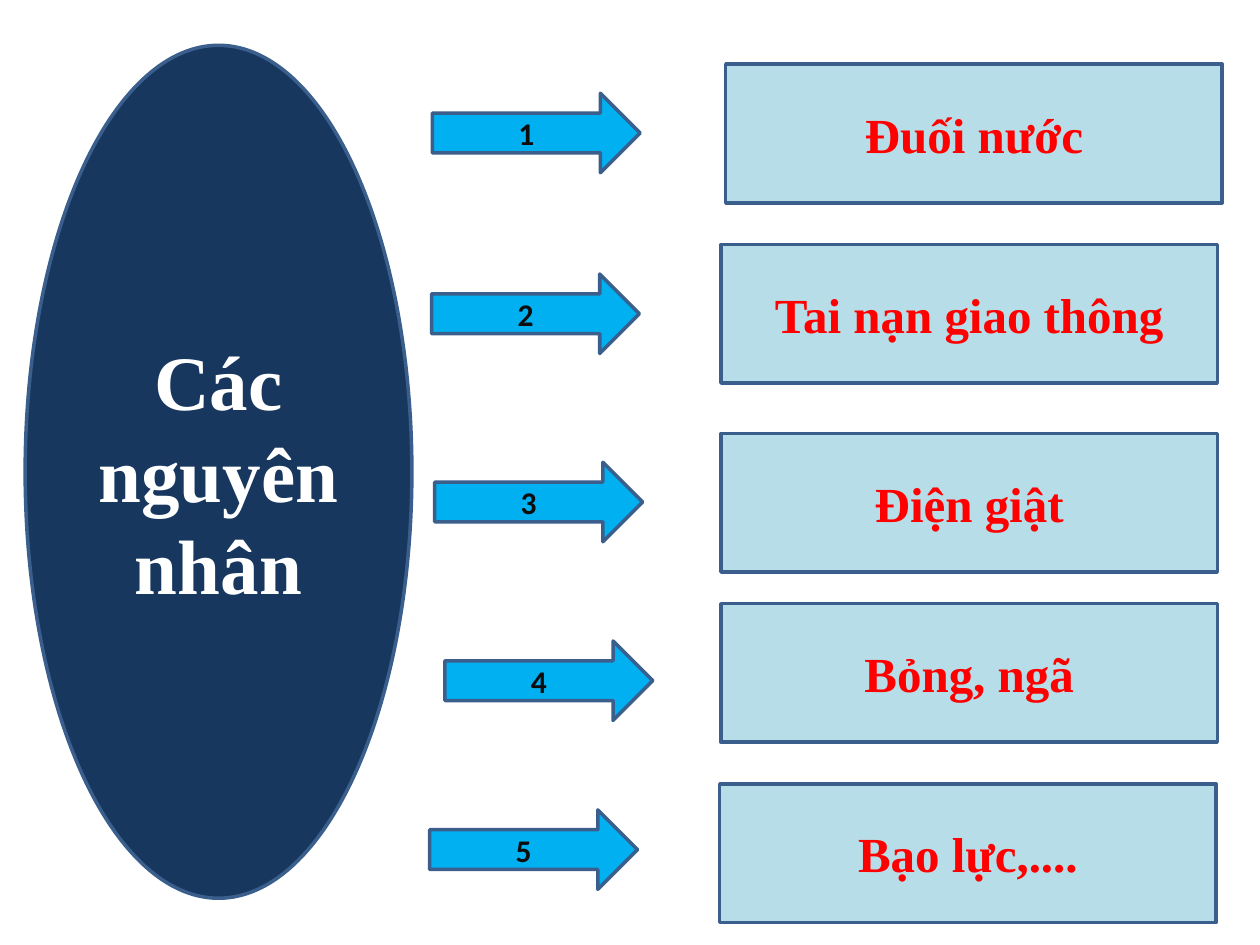
from dataclasses import dataclass

from pptx import Presentation
from pptx.dml.color import RGBColor
from pptx.enum.shapes import MSO_SHAPE
from pptx.enum.text import MSO_ANCHOR, PP_ALIGN
from pptx.util import Pt

OVAL = MSO_SHAPE.OVAL
ARROW = MSO_SHAPE.RIGHT_ARROW
RECT = MSO_SHAPE.RECTANGLE
MIDDLE = MSO_ANCHOR.MIDDLE
CENTER = PP_ALIGN.CENTER


@dataclass(frozen=True)
class Style:
    """Fill and type of one kind of part."""
    fill: str
    ink: str
    font: str
    size: float


@dataclass(frozen=True)
class Theme:
    """Colours and type sizes of the slide."""
    edge: str = "3A5F8C"
    weight: float = 2
    topic: Style = Style("17375E", "FFFFFF", "Times New Roman", 44)
    arrow: Style = Style("00B0F0", "0D0D0D", "Calibri", 18)
    cause: Style = Style("B7DEE8", "FF0000", "Times New Roman", 28)


THEME = Theme()
TOPIC_BOX = (14.4, 25.9, 221, 487.4)
ARROW_SIZE = (118.8, 45.4)
CAUSE_SIZE = (283.7, 79.2)
ROWS = [
    ("Đuối nước", (247, 53.3), (414.7, 36.7)),
    ("Tai nạn giao thông", (246.6, 156.6), (412, 139.7)),
    ("Điện giật", (248.4, 264.2), (412, 247.7)),
    ("Bỏng, ngã", (254.2, 366.3), (412, 345)),
    ("Bạo lực,....", (245.5, 462.8), (411.3, 448)),
]


def add_part(slide, kind, box, text, style):
    """Draw one filled shape with bold centred text."""
    part = slide.shapes.add_shape(kind, *map(Pt, box))
    part.shadow.inherit = False
    part.fill.solid()
    part.fill.fore_color.rgb = RGBColor.from_string(style.fill)
    part.line.color.rgb = RGBColor.from_string(THEME.edge)
    part.line.width = Pt(THEME.weight)
    frame = part.text_frame
    frame.word_wrap = True
    frame.vertical_anchor = MIDDLE
    para = frame.paragraphs[0]
    para.alignment = CENTER
    run = para.add_run()
    run.text = text
    run.font.name = style.font
    run.font.size = Pt(style.size)
    run.font.bold = True
    run.font.color.rgb = RGBColor.from_string(style.ink)


def add_topic(slide, box):
    """Draw the oval that names the topic."""
    add_part(slide, OVAL, box, "Các nguyên nhân", THEME.topic)


def add_arrow(slide, box, number):
    """Draw one numbered arrow."""
    add_part(slide, ARROW, box, str(number), THEME.arrow)


def add_cause(slide, box, text):
    """Draw the box of one cause."""
    add_part(slide, RECT, box, text, THEME.cause)


def main():
    """Build and save the slide."""
    deck = Presentation()
    deck.slide_width, deck.slide_height = Pt(720), Pt(540)
    slide = deck.slides.add_slide(deck.slide_layouts.get_by_name("Blank"))
    add_topic(slide, TOPIC_BOX)
    for number, (text, start, place) in enumerate(ROWS, 1):
        add_arrow(slide, start + ARROW_SIZE, number)
        add_cause(slide, place + CAUSE_SIZE, text)
    deck.save("out.pptx")


if __name__ == "__main__":
    main()
